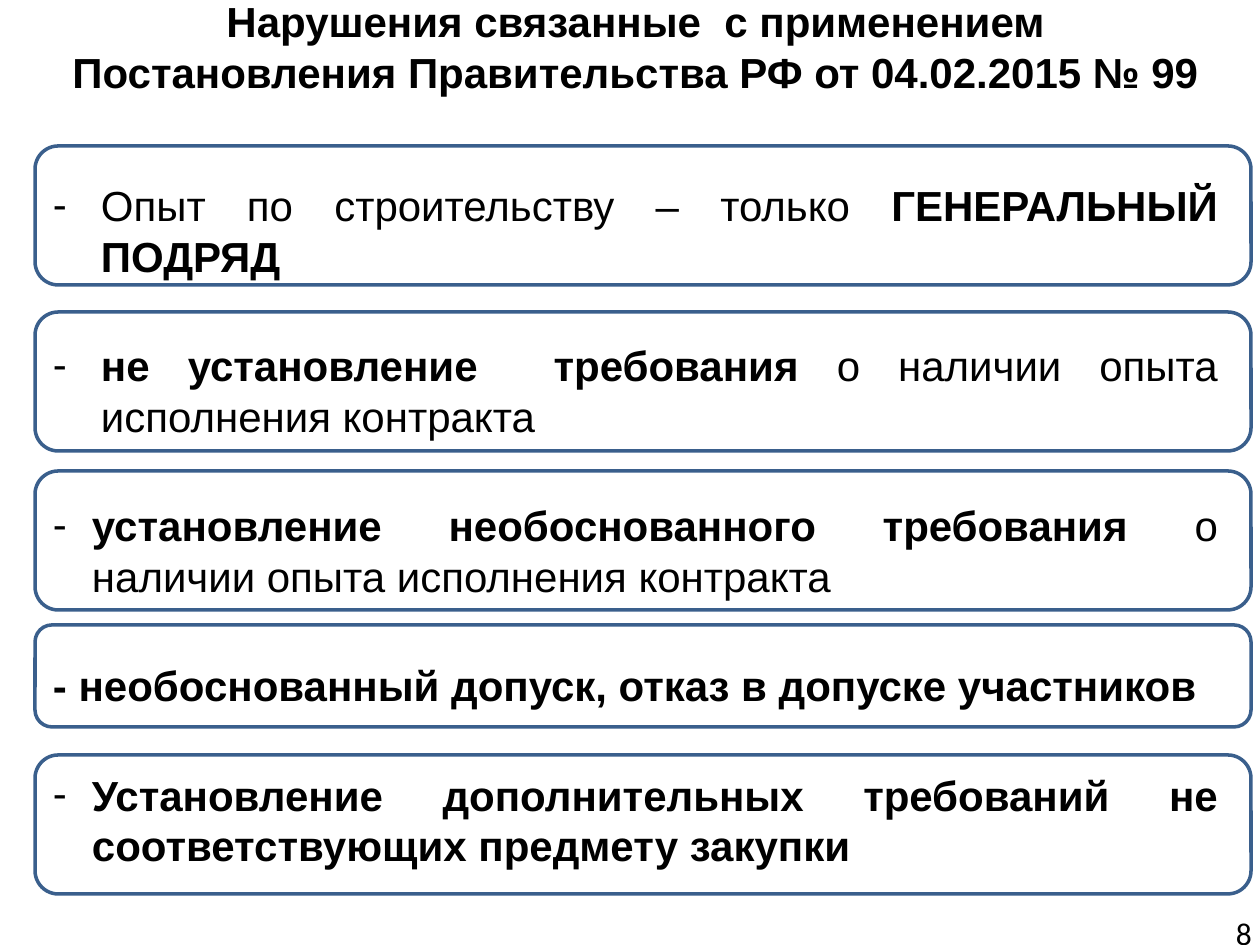
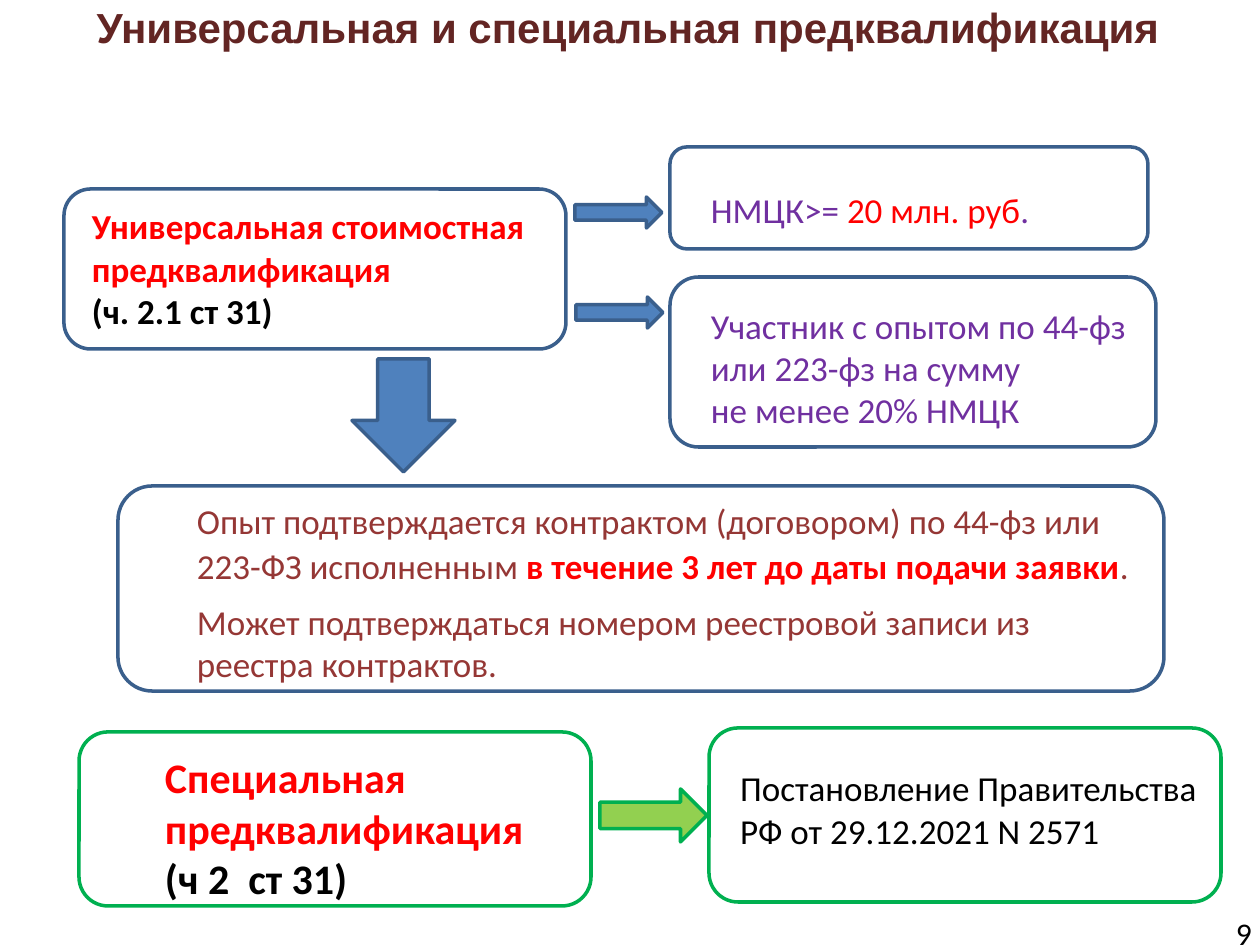
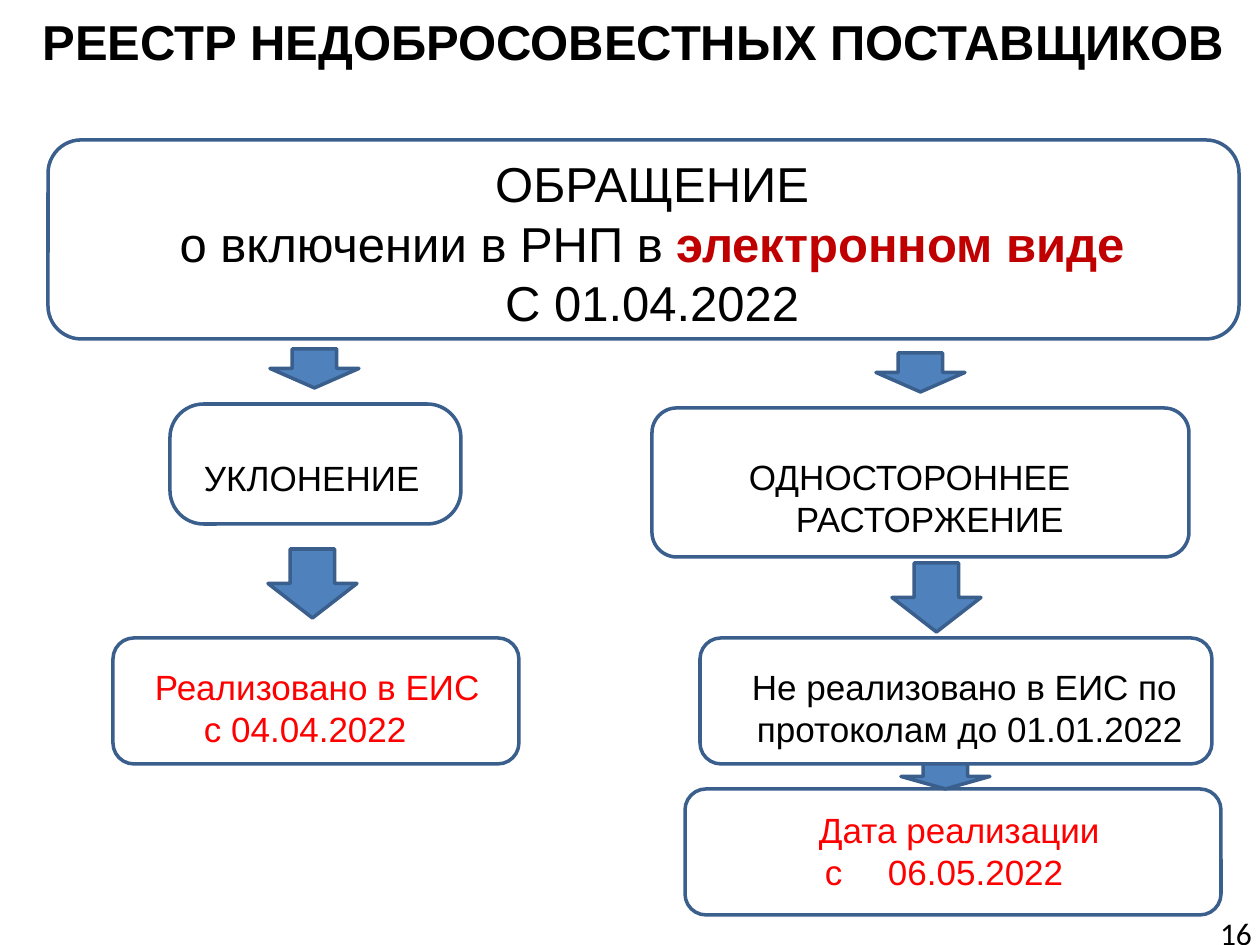
from dataclasses import dataclass

from lxml import etree
from pptx import Presentation
from pptx.dml.color import RGBColor
from pptx.enum.shapes import MSO_SHAPE as Shape
from pptx.enum.text import MSO_ANCHOR as Anchor, MSO_AUTO_SIZE as AutoSize, PP_ALIGN as Align
from pptx.oxml.ns import qn
from pptx.util import Emu, Pt

PX_PER_INCH = 126
PAGE_SIZE = (1260, 945)
LEADING = 1.21
CORNER = 0.16667
CORNER_INSET = 0.2929
PAD_X, PAD_Y = 13, 6
COLORS = {
    "text": "000000",
    "outline": "3A5F8C",
    "arrow": "4F81BD",
    "green": "00B050",
    "lime": "92D050",
    "red": "FF0000",
    "crimson": "C00000",
    "maroon": "632523",
    "brick": "953735",
    "purple": "7030A0",
}


@dataclass
class Line:
    spans: list
    size: int = 20
    font: str = "Calibri"
    align: Align = Align.LEFT
    indent: int = 0
    before: float = 0
    leading: int = 0
    bullet: str = ""
    tab: int = 0


def px(value):
    return Emu(round(value * 914400 / PX_PER_INCH))


def color(name):
    return RGBColor.from_string(COLORS[name])


def place(shape, box):
    shape.left, shape.top, shape.width, shape.height = map(px, box)


def prepare_frame(frame, left=PAD_X, top=PAD_Y, right=PAD_X, bottom=PAD_Y):
    frame.word_wrap = True
    frame.auto_size = AutoSize.NONE
    frame.vertical_anchor = Anchor.TOP
    frame.margin_left, frame.margin_top = px(left), px(top)
    frame.margin_right, frame.margin_bottom = px(right), px(bottom)


def format_paragraph(para, line):
    props = para._p.get_or_add_pPr()
    props.set("marL", str(px(line.indent)))
    props.set("indent", str(px(-line.indent if line.bullet else 0)))
    if line.bullet:
        etree.SubElement(props, qn("a:buFont"), typeface=line.font)
        etree.SubElement(props, qn("a:buChar"), char=line.bullet)
    else:
        etree.SubElement(props, qn("a:buNone"))
    if line.tab:
        stops = etree.SubElement(props, qn("a:tabLst"))
        etree.SubElement(stops, qn("a:tab"), pos=str(px(line.tab)), algn="l")
    para.alignment = line.align
    para.line_spacing = Pt(line.leading or round(line.size * LEADING))
    para.space_before = Pt(line.before)
    para.space_after = Pt(0)


def write_lines(frame, lines):
    for index, line in enumerate(lines):
        para = frame.add_paragraph() if index else frame.paragraphs[0]
        format_paragraph(para, line)
        for text, tint, bold in line.spans:
            span = para.add_run()
            span.text = text
            span.font.name = line.font
            span.font.size = Pt(line.size)
            span.font.bold = bold
            span.font.color.rgb = color(tint)


def add_page(deck, layout, title, box, number, size=24, tint="text"):
    page = deck.slides.add_slide(deck.slide_layouts[layout])
    place(page.shapes.title, box)
    frame = page.shapes.title.text_frame
    prepare_frame(frame)
    write_lines(frame, [Line([(title, tint, True)], size, "Arial", Align.CENTER)])
    footer = page.shapes.add_textbox(*map(px, (971, 907, 289, 38)))
    prepare_frame(footer.text_frame, right=8, bottom=0)
    write_lines(footer.text_frame,
                [Line([(number, "text", False)], 18, align=Align.RIGHT)])
    return page


def add_outlined(page, kind, box, outline="outline", fill=None):
    shape = page.shapes.add_shape(kind, *map(px, box))
    shape.shadow.inherit = False
    if fill:
        shape.fill.solid()
        shape.fill.fore_color.rgb = color(fill)
    else:
        shape.fill.background()
    shape.line.color.rgb = color(outline)
    shape.line.width = Pt(2)
    return shape


def add_card(page, box, lines=(), left=0, top=0, right=0, outline="outline", corner=CORNER):
    card = add_outlined(page, Shape.ROUNDED_RECTANGLE, box, outline)
    card.adjustments[0] = corner
    inset = corner * CORNER_INSET * min(box[2:])
    pads = [max(0, pad - inset) for pad in (left, top, right)]
    prepare_frame(card.text_frame, *pads, bottom=0)
    write_lines(card.text_frame, lines)


def add_arrows(page, kind, boxes, outline="outline", fill="arrow"):
    for box in boxes:
        add_outlined(page, kind, box, outline, fill)


def build_violations(deck):
    page = add_page(
        deck, 1,
        "Нарушения связанные  с применением Постановления Правительства РФ от 04.02.2015 № 99",
        (49, -11, 1173, 115), "8")
    items = [
        ("-", 48, [("Опыт по строительству – только ", False), ("ГЕНЕРАЛЬНЫЙ ПОДРЯД", True)]),
        ("-", 48, [("не установление  требования", True),
                   (" о наличии опыта исполнения контракта", False)]),
        ("-", 39, [("установление необоснованного требования", True),
                   (" о наличии опыта исполнения контракта", False)]),
        ("", 0, [("- необоснованный допуск, отказ в допуске участников", True)]),
        ("-", 39, [("Установление дополнительных требований не соответствующих предмету закупки",
                    True)]),
    ]
    body = page.placeholders[1]
    place(body, (40, 173, 1191, 710))
    prepare_frame(body.text_frame)
    write_lines(body.text_frame, [
        Line([(text, "text", bold) for text, bold in spans], 24, "Arial", Align.JUSTIFY,
             indent, before=33.5 if index else 0, bullet=bullet)
        for index, (bullet, indent, spans) in enumerate(items)])
    for top, height in ((146, 139), (312, 139), (471, 139), (625, 102), (755, 139)):
        add_card(page, (35, top, 1216, height))


def build_prequalification(deck):
    page = add_page(deck, 5, "Универсальная и специальная предквалификация",
                    (-2, -5, 1260, 91), "9", tint="maroon")
    add_card(page, (64, 189, 502, 160), [
        Line([("Универсальная стоимостная предквалификация", "red", True)]),
        Line([("(ч. 2.1 ст 31)", "text", True)]),
    ], left=28, top=16)
    add_card(page, (670, 147, 478, 102), [
        Line([("НМЦК>= ", "purple", False), ("20 млн. руб", "red", False),
              (".", "purple", False)]),
    ], left=41, top=42)
    add_card(page, (670, 277, 486, 170), [
        Line([(text, "purple", False)]) for text in
        ("Участник с опытом по 44-фз", "или 223-фз на сумму", "не менее 20% НМЦК")
    ], left=41, top=27)
    add_card(page, (118, 486, 1046, 205), [
        Line([("Опыт подтверждается контрактом (договором) по 44-фз или 223-ФЗ исполненным ",
               "brick", False),
              ("в течение 3 лет до даты подачи заявки", "red", True),
              (".", "brick", False)], leading=26),
        Line([("Может подтверждаться номером реестровой записи из реестра контрактов.",
               "brick", False)], before=8),
    ], left=79, top=8, right=30)
    add_card(page, (79, 732, 512, 174), [
        Line([("Специальная", "red", True)], 24),
        Line([("предквалификация", "red", True)], 24),
        Line([("(ч 2  ст 31)", "text", True)], 24),
    ], left=86, top=19, outline="green")
    add_card(page, (709, 728, 512, 174), [
        Line([(text, "text", False)]) for text in
        ("Постановление Правительства", "РФ от 29.12.2021 N 2571")
    ], left=31, top=39, outline="green")
    add_arrows(page, Shape.DOWN_ARROW, [(352, 359, 103, 113)])
    add_arrows(page, Shape.RIGHT_ARROW, [(575, 197, 87, 31), (576, 297, 87, 31)])
    add_arrows(page, Shape.RIGHT_ARROW, [(600, 789, 107, 53)], "green", "lime")


def build_registry(deck):
    page = add_page(deck, 5, "РЕЕСТР НЕДОБРОСОВЕСТНЫХ ПОСТАВЩИКОВ",
                    (3, 5, 1260, 87), "16", size=28)
    appeal = [
        [("ОБРАЩЕНИЕ", "text", False)],
        [("о включении в РНП в ", "text", False), ("электронном виде", "crimson", True)],
        [("С 01.04.2022", "text", False)],
    ]
    add_card(page, (48, 140, 1191, 199),
             [Line(spans, 28, "Arial", Align.CENTER) for spans in appeal], left=27, top=13)

    def add_step(box, texts, left, top, tint="text", indent=0, tab=0, corner=CORNER):
        lines = [Line([(text, tint, False)], font="Arial", indent=indent * index, tab=tab)
                 for index, text in enumerate(texts)]
        add_card(page, box, lines, left, top, corner=corner)

    add_step((170, 404, 291, 120), ["УКЛОНЕНИЕ"], 34, 52, corner=0.28)
    add_step((652, 408, 537, 149), ["ОДНОСТОРОННЕЕ", "РАСТОРЖЕНИЕ"], 97, 48, indent=47)
    add_step((113, 638, 406, 126), ["Реализовано в ЕИС", "с 04.04.2022"], 42, 28,
             "red", indent=49)
    add_step((700, 638, 512, 126), ["Не реализовано в ЕИС по", "протоколам до 01.01.2022"],
             52, 28, indent=5)
    add_step((685, 789, 536, 126), ["Дата реализации", "с\t06.05.2022"], 134, 20,
             "red", indent=6, tab=62)
    add_arrows(page, Shape.DOWN_ARROW, [
        (270, 349, 89, 39), (876, 353, 89, 39),
        (268, 549, 89, 69), (892, 563, 89, 69),
        (901, 764, 89, 25),
    ])


def main():
    deck = Presentation()
    deck.slide_width, deck.slide_height = map(px, PAGE_SIZE)
    build_violations(deck)
    build_prequalification(deck)
    build_registry(deck)
    deck.save("out.pptx")


if __name__ == "__main__":
    main()
